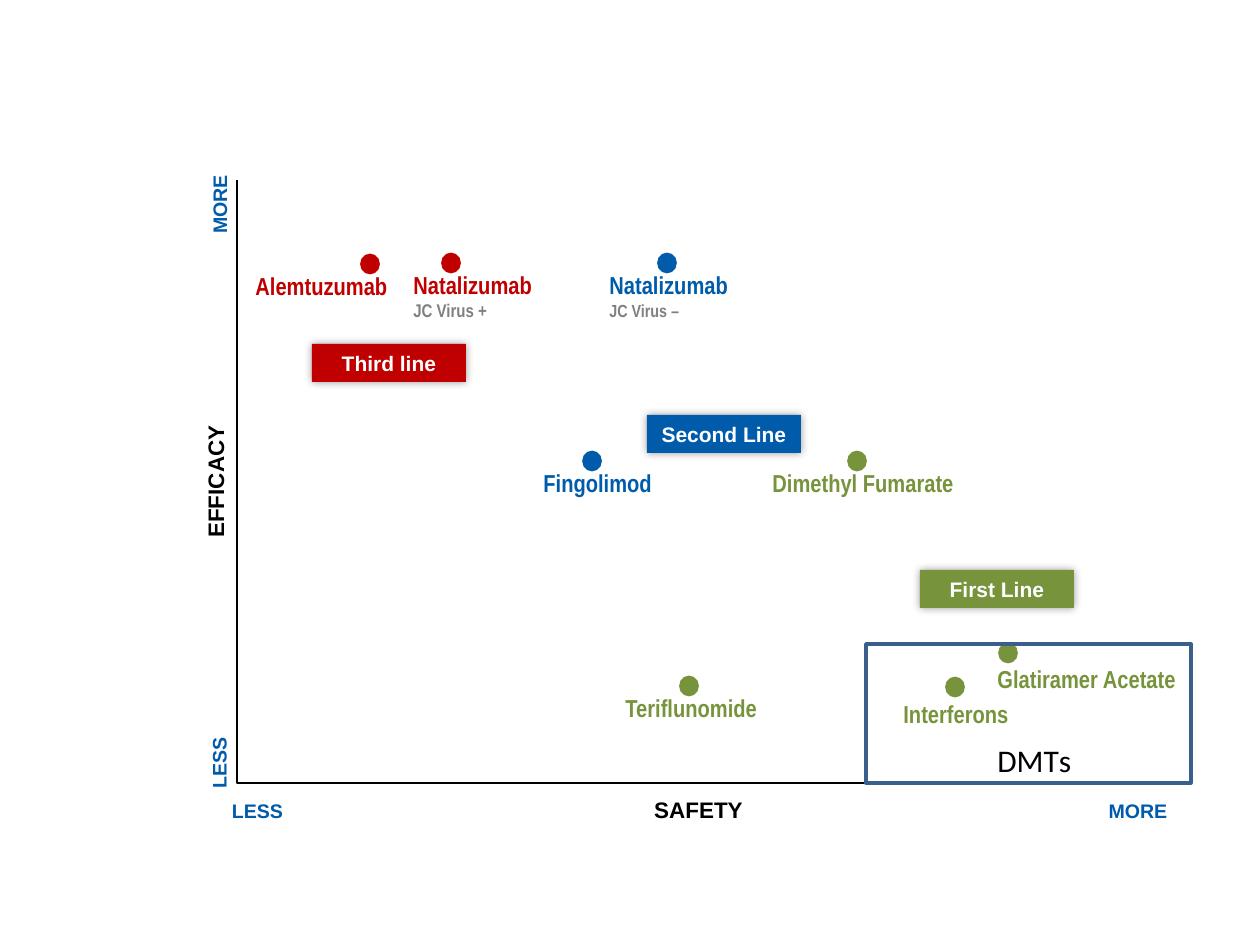
from lxml import etree
from pptx import Presentation
from pptx.dml.color import RGBColor
from pptx.enum.shapes import MSO_SHAPE
from pptx.enum.text import MSO_ANCHOR, MSO_AUTO_SIZE, PP_ALIGN
from pptx.oxml.ns import qn
from pptx.util import Pt

PX = 914400 / 126
RED, BLUE, GREEN = "C00000", "005CAB", "77933C"
BLACK, WHITE, GREY, FRAME = "000000", "FFFFFF", "808080", "3A5F8C"
DOT_WIDTH, DOT_HEIGHT = 18, 19

AXES = [(237, 180), (237, 783), (1160, 783)]
# text, size, colour, (left, top, width, height), rotation
AXIS_LABELS = [
    ("efficacy", 16, BLACK, (144, 458, 139, 47), 270),
    ("safety", 16, BLACK, (641, 784, 115, 47), 0),
    ("more", 14, BLUE, (175, 183, 86, 43), 270),
    ("less", 14, BLUE, (179, 741, 77, 43), 270),
    ("less", 14, BLUE, (219, 788, 77, 43), 0),
    ("more", 14, BLUE, (1095, 788, 86, 43), 0),
]
# name, note, note size, colour, dot centre, label (left, top, width)
DRUGS = [
    ("Alemtuzumab", "", 0, RED, (370, 264), (243, 265, 159)),
    ("Natalizumab", "JC Virus +", 10.5, RED, (451, 263), (401, 264, 145)),
    ("Natalizumab", "JC Virus –", 10, BLUE, (667, 263), (597, 264, 145)),
    ("Fingolimod", "", 0, BLUE, (592, 461), (531, 462, 135)),
    ("Dimethyl Fumarate", "", 0, GREEN, (857, 461), (760, 462, 209)),
    ("Teriflunomide", "", 0, GREEN, (689, 686), (613, 687, 159)),
    ("Interferons", "", 0, GREEN, (955, 687), (891, 693, 132)),
    ("Glatiramer Acetate", "", 0, GREEN, (1008, 653), (985, 658, 205)),
]
# text, colour, left, top
TREATMENT_LINES = [
    ("Third line", RED, 312, 344),
    ("Second Line", BLUE, 647, 415),
    ("First Line", GREEN, 920, 570),
]


def emu(*lengths):
    return [round(length * PX) for length in lengths]


def colour(value):
    return RGBColor.from_string(value)


def add_span(para, text, size, ink, font="Arial", bold=True, small_caps=False):
    span = para.add_run()
    span.text = text
    for name, value in {"name": font, "size": Pt(size), "bold": bold}.items():
        setattr(span.font, name, value)
    span.font.color.rgb = colour(ink)
    if small_caps:
        span.font._element.set("cap", "small")


def add_text(page, area, wrap=False, align=PP_ALIGN.LEFT):
    """Add an empty text box and return it with its first paragraph."""
    box = page.shapes.add_textbox(*emu(*area))
    frame = box.text_frame
    frame.word_wrap = wrap
    frame.auto_size = MSO_AUTO_SIZE.SHAPE_TO_FIT_TEXT
    frame.paragraphs[0].alignment = align
    return box, frame.paragraphs[0]


def add_solid(page, kind, area, fill=None, line=None, width=1):
    shape = page.shapes.add_shape(kind, *emu(*area))
    shape.shadow.inherit = False
    if fill:
        shape.fill.solid()
        shape.fill.fore_color.rgb = colour(fill)
    else:
        shape.fill.background()
    if line:
        shape.line.color.rgb = colour(line)
        shape.line.width = Pt(width)
    else:
        shape.line.fill.background()
    return shape


def add_glow_shadow(shape):
    """Give the shape a soft, centred black shadow."""
    effects = shape._element.spPr.find(qn("a:effectLst"))
    shadow = etree.SubElement(effects, qn("a:outerShdw"), blurRad=str(Pt(5)),
                              dist="0", dir="0", algn="ctr", rotWithShape="0")
    ink = etree.SubElement(shadow, qn("a:srgbClr"), val=BLACK)
    etree.SubElement(ink, qn("a:alpha"), val="40000")


def add_axes(page):
    start, *others = AXES
    builder = page.shapes.build_freeform(*start, scale=PX)
    builder.add_line_segments(others, close=False)
    axes = builder.convert_to_shape()
    axes.shadow.inherit = False
    axes.fill.background()
    axes.line.color.rgb = colour(BLACK)
    axes.line.width = Pt(1.5)


def add_drug(page, name, note, note_size, ink, centre, label):
    x, y = centre
    area = (x - DOT_WIDTH / 2, y - DOT_HEIGHT / 2, DOT_WIDTH, DOT_HEIGHT)
    add_solid(page, MSO_SHAPE.OVAL, area, ink, ink)
    _, para = add_text(page, (*label, 64 if note else 43))
    add_span(para, name, 14, ink, "Arial Narrow")
    if note:
        para.add_line_break()
        add_span(para, note, note_size, GREY, "Arial Narrow")


def add_treatment_line(page, text, fill, left, top):
    tag = add_solid(page, MSO_SHAPE.RECTANGLE, (left, top, 154, 38), fill)
    add_glow_shadow(tag)
    frame = tag.text_frame
    frame.word_wrap = False
    frame.vertical_anchor = MSO_ANCHOR.MIDDLE
    frame.paragraphs[0].alignment = PP_ALIGN.CENTER
    add_span(frame.paragraphs[0], text, 12, WHITE)


def main():
    deck = Presentation()
    deck.slide_width, deck.slide_height = emu(1260, 945)
    page = deck.slides.add_slide(deck.slide_layouts[6])

    add_axes(page)
    for text, size, ink, area, rotation in AXIS_LABELS:
        box, para = add_text(page, area, align=PP_ALIGN.CENTER)
        box.rotation = rotation
        add_span(para, text, size, ink, small_caps=True)
    for drug in DRUGS:
        add_drug(page, *drug)
    for treatment_line in TREATMENT_LINES:
        add_treatment_line(page, *treatment_line)

    add_solid(page, MSO_SHAPE.RECTANGLE, (866, 644, 325, 139), line=FRAME, width=2)
    _, para = add_text(page, (985, 735, 121, 50), wrap=True)
    add_span(para, "DMΤs", 18, BLACK, "Calibri", bold=False)

    deck.save("out.pptx")


if __name__ == "__main__":
    main()
